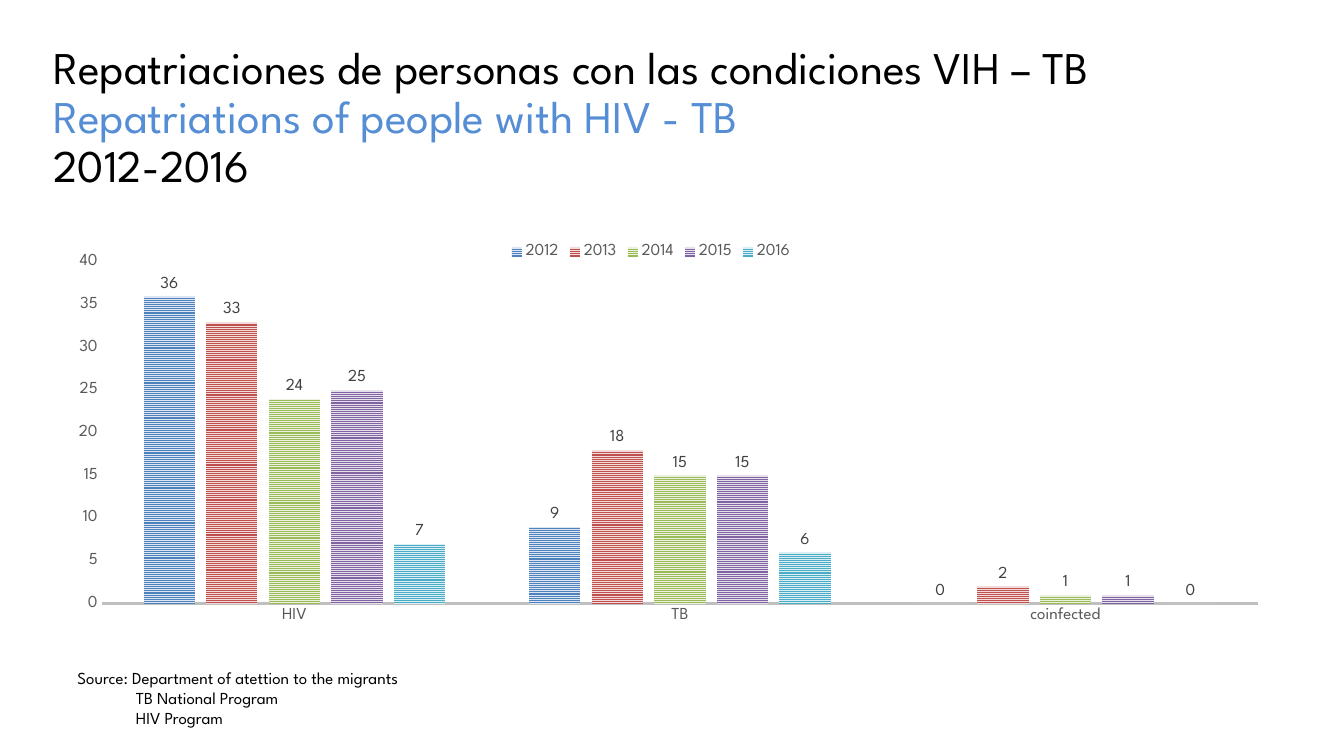
import pptx
import pptx.chart.data
import pptx.dml.color
import pptx.enum.chart
import pptx.enum.dml
import pptx.enum.text
import pptx.oxml
import pptx.util
from pptx.util import Inches

FONT = "League Spartan"
COLORS = {
    "black": "000000",
    "english": "558ED5",
    "axis_text": "595959",
    "label": "404040",
    "axis_line": "BFBFBF",
}
YEARS = [
    ("2012", (36, 9, 0), "4F81BD", "DCE6F2"),
    ("2013", (33, 18, 2), "C0504D", "F2DCDB"),
    ("2014", (24, 15, 1), "9BBB59", "EBF1DE"),
    ("2015", (25, 15, 1), "8064A2", "E6E0EC"),
    ("2016", (7, 6, 0), "4BACC6", "DBEEF4"),
]


def rgb(value):
    return pptx.dml.color.RGBColor.from_string(value)


def style(font, size=12, color="black"):
    font.name = FONT
    font.size = pptx.util.Pt(size)
    font.color.rgb = rgb(COLORS[color])


deck = pptx.Presentation()
deck.slide_width, deck.slide_height = Inches(13.33), Inches(7.5)
page = deck.slides.add_slide(deck.slide_layouts[5])

# Title in two languages
title = page.shapes.title
title.left, title.top = Inches(0.43), Inches(0.45)
title.width, title.height = Inches(12.57), Inches(1.45)
title.text_frame.word_wrap = True
title.text_frame.auto_size = pptx.enum.text.MSO_AUTO_SIZE.NONE
title.text_frame.vertical_anchor = pptx.enum.text.MSO_ANCHOR.MIDDLE
para = title.text_frame.paragraphs[0]
para.alignment = pptx.enum.text.PP_ALIGN.LEFT
para.line_spacing = 0.9
title_lines = [
    ("Repatriaciones de personas con las condiciones VIH – TB", "black"),
    ("Repatriations of people with HIV - TB", "english"),
    ("2012-2016", "black"),
]
for number, (text, color) in enumerate(title_lines):
    if number:
        para.add_line_break()
    span = para.add_run()
    span.text = text
    style(span.font, 32.4, color)

# Column chart
data = pptx.chart.data.CategoryChartData()
data.categories = ["HIV", "TB", "coinfected"]
for year, values, _, _ in YEARS:
    data.add_series(year, values)
chart = page.shapes.add_chart(
    pptx.enum.chart.XL_CHART_TYPE.COLUMN_CLUSTERED,
    Inches(0.43), Inches(2.31), Inches(12.06), Inches(4.4), data,
).chart
style(chart.font, 10)
chart.has_title = False
chart.has_legend = True
chart.legend.position = pptx.enum.chart.XL_LEGEND_POSITION.TOP
chart.legend.include_in_layout = False
style(chart.legend.font, color="axis_text")

for axis in (chart.category_axis, chart.value_axis):
    axis.has_major_gridlines = False
    axis.major_tick_mark = pptx.enum.chart.XL_TICK_MARK.NONE
    axis.minor_tick_mark = pptx.enum.chart.XL_TICK_MARK.NONE
    style(axis.tick_labels.font, color="axis_text")
chart.category_axis.format.line.color.rgb = rgb(COLORS["axis_line"])
chart.category_axis.format.line.width = pptx.util.Pt(1.5)
chart.value_axis.format.line.fill.background()
chart.value_axis.minimum_scale = 0
chart.value_axis.maximum_scale = 40
chart.value_axis.major_unit = 5

plot = chart.plots[0]
plot.gap_width = 164
plot.overlap = -22
plot.vary_by_categories = False
for series, (_, _, stripe, ground) in zip(plot.series, YEARS):
    fill = series.format.fill
    fill.patterned()
    fill.pattern = pptx.enum.dml.MSO_PATTERN.NARROW_HORIZONTAL
    fill.fore_color.rgb = rgb(stripe)
    fill.back_color.rgb = rgb(ground)
    series.format.line.fill.background()
    labels = series.data_labels
    labels.show_value = True
    labels.position = pptx.enum.chart.XL_LABEL_POSITION.OUTSIDE_END
    style(labels.font, color="label")

# Fixed inner plot area
plot_area = chart.element.chart.plotArea
for old_layout in plot_area.findall(pptx.oxml.ns.qn("c:layout")):
    plot_area.remove(old_layout)
settings = [
    ("layoutTarget", "inner"), ("xMode", "edge"), ("yMode", "edge"),
    ("x", 0.048), ("y", 0.066), ("w", 0.952), ("h", 0.77),
]
plot_area.insert(0, pptx.oxml.parse_xml(
    f'<c:layout {pptx.oxml.ns.nsdecls("c")}><c:manualLayout>'
    + "".join(f'<c:{name} val="{value}"/>' for name, value in settings)
    + "</c:manualLayout></c:layout>"
))

# Source note
box = page.shapes.add_textbox(Inches(0.67), Inches(6.57), Inches(4.04), Inches(0.71))
frame = box.text_frame
frame.word_wrap = False
frame.auto_size = pptx.enum.text.MSO_AUTO_SIZE.SHAPE_TO_FIT_TEXT
source_lines = [
    ("Source: Department of atettion to the migrants", 0),
    ("TB National Program", 0.58),
    ("HIV Program", 0.58),
]
for number, (text, indent) in enumerate(source_lines):
    para = frame.add_paragraph() if number else frame.paragraphs[0]
    para.alignment = pptx.enum.text.PP_ALIGN.LEFT
    para._p.get_or_add_pPr().set("marL", str(Inches(indent)))
    span = para.add_run()
    span.text = text
    style(span.font)

deck.save("out.pptx")
